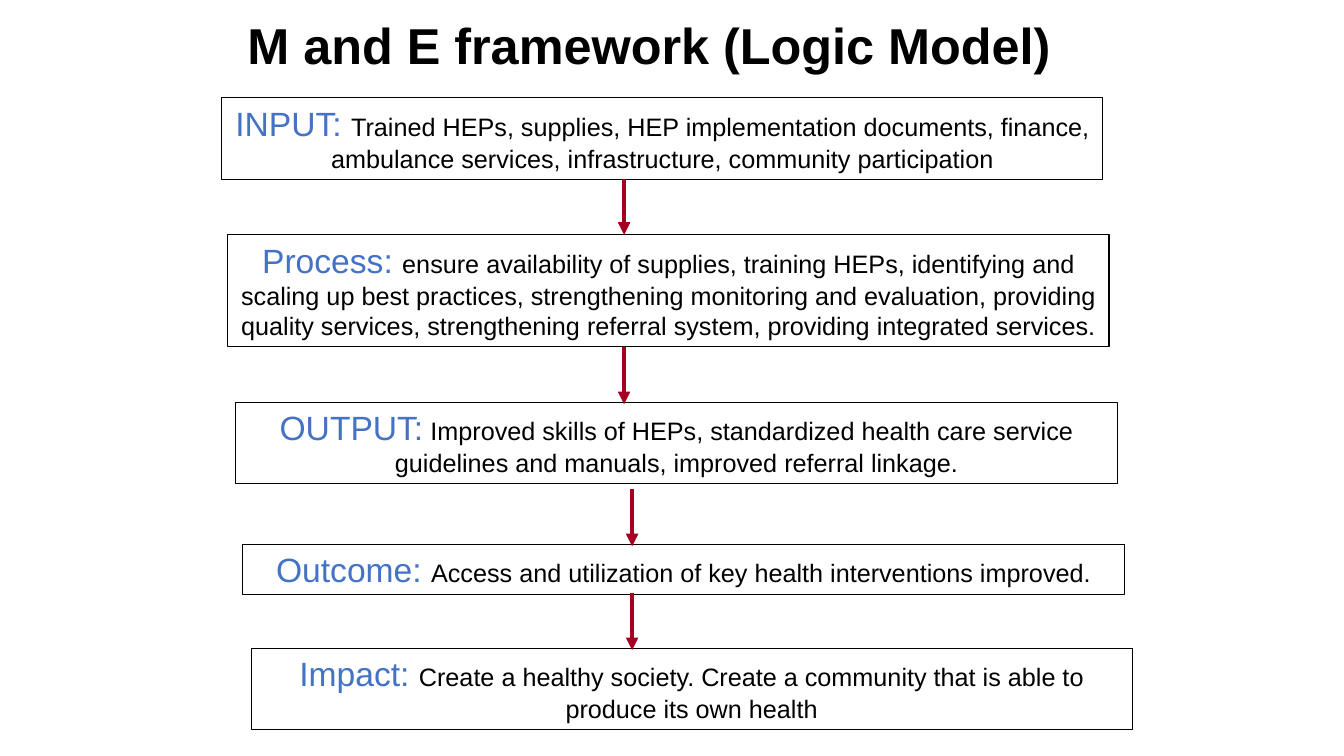
from lxml.etree import SubElement
from pptx import Presentation
from pptx.dml.color import RGBColor
from pptx.enum.shapes import MSO_CONNECTOR as Connector, MSO_SHAPE as Shape
from pptx.enum.text import MSO_ANCHOR as Anchor, MSO_AUTO_SIZE as AutoSize, PP_ALIGN as Align
from pptx.oxml.ns import qn
from pptx.util import Inches, Pt

BLACK = RGBColor(0x00, 0x00, 0x00)
WHITE = RGBColor(0xFF, 0xFF, 0xFF)
BLUE = RGBColor(0x44, 0x72, 0xC4)
CRIMSON = RGBColor(0xA5, 0x00, 0x21)

BOX_WIDTH = 8.74
STAGES = [
    (2.2, 0.97, 0.81, "INPUT: ",
     "Trained HEPs, supplies, HEP implementation documents, finance, "
     "ambulance services, infrastructure, community participation"),
    (2.26, 2.33, 1.11, "Process: ",
     "ensure availability of supplies, training HEPs, identifying and scaling up "
     "best practices, strengthening monitoring and evaluation, providing quality "
     "services, strengthening referral system, providing integrated services."),
    (2.34, 3.99, 0.81, "OUTPUT:",
     " Improved skills of HEPs, standardized health care service "
     "guidelines and manuals, improved referral linkage."),
    (2.41, 5.4, 0.5, "Outcome: ",
     "Access and utilization of key health interventions improved."),
    (2.49, 6.43, 0.81, "Impact: ",
     "Create a healthy society. Create a community that is able to "
     "produce its own health"),
]
ARROWS = [(6.19, 1.78, 2.33), (6.19, 3.44, 4.01), (6.27, 4.85, 5.42), (6.27, 5.88, 6.45)]


def add_text(para, text, size=18, color=BLACK, bold=False, font="Arial"):
    span = para.add_run()
    span.text = text
    span.font.name = font
    span.font.size = Pt(size)
    span.font.bold = bold
    span.font.color.rgb = color


class LogicModelSlide:
    """Draws the title, stage boxes and arrows of a logic model on one slide."""

    def __init__(self, deck):
        self.page = deck.slides.add_slide(deck.slide_layouts[5])
        self.page.background.fill.solid()
        self.page.background.fill.fore_color.rgb = WHITE

    def title(self, text, left, top, width, height):
        box = self.page.shapes.title
        box.left, box.top = Inches(left), Inches(top)
        box.width, box.height = Inches(width), Inches(height)
        frame = box.text_frame
        frame.word_wrap = True
        frame.auto_size = AutoSize.NONE
        frame.vertical_anchor = Anchor.TOP
        para = frame.paragraphs[0]
        para.alignment = Align.CENTER
        add_text(para, text, size=36, bold=True)

    def stage(self, left, top, height, label, detail):
        box = self.page.shapes.add_shape(
            Shape.RECTANGLE, Inches(left), Inches(top), Inches(BOX_WIDTH), Inches(height))
        box.shadow.inherit = False
        box.fill.background()
        box.line.color.rgb = BLACK
        box.line.width = Pt(0.75)
        frame = box.text_frame
        frame.word_wrap = True
        frame.auto_size = AutoSize.SHAPE_TO_FIT_TEXT
        frame.vertical_anchor = Anchor.TOP
        para = frame.paragraphs[0]
        para.alignment = Align.CENTER
        para.space_before = Pt(15)
        add_text(para, label, size=24, color=BLUE)
        add_text(para, detail)

    def arrow(self, x, top, bottom):
        line = self.page.shapes.add_connector(
            Connector.STRAIGHT, Inches(x), Inches(top), Inches(x), Inches(bottom))
        line.line.color.rgb = CRIMSON
        line.line.width = Pt(3)
        SubElement(line.line._get_or_add_ln(), qn("a:tailEnd"), type="triangle")
        SubElement(line._element.spPr, qn("a:effectLst"))


def main():
    deck = Presentation()
    deck.slide_width, deck.slide_height = Inches(13.33), Inches(7.5)
    slide = LogicModelSlide(deck)
    slide.title("M and E framework (Logic Model)", 1.94, 0.09, 9, 1.57)
    for stage in STAGES:
        slide.stage(*stage)
    for arrow in ARROWS:
        slide.arrow(*arrow)
    deck.save("out.pptx")


if __name__ == "__main__":
    main()
